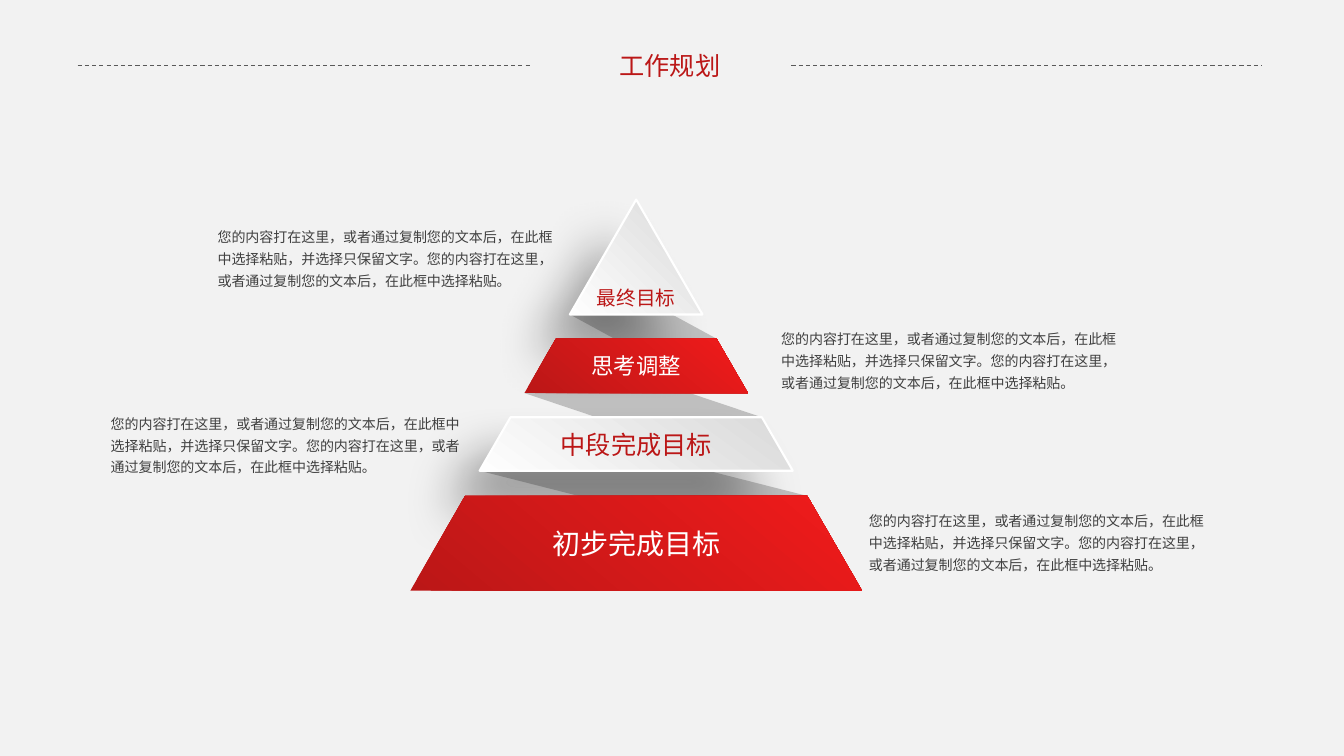
from dataclasses import dataclass

from lxml import etree
from pptx import Presentation
from pptx.dml.color import RGBColor
from pptx.enum.dml import MSO_LINE
from pptx.enum.shapes import MSO_CONNECTOR
from pptx.enum.text import MSO_ANCHOR, MSO_AUTO_SIZE, PP_ALIGN
from pptx.oxml.ns import qn
from pptx.util import Inches, Pt

CENTER, LEFT = PP_ALIGN.CENTER, PP_ALIGN.LEFT
TOP, MIDDLE, BOTTOM = MSO_ANCHOR.TOP, MSO_ANCHOR.MIDDLE, MSO_ANCHOR.BOTTOM
FIT = MSO_AUTO_SIZE.SHAPE_TO_FIT_TEXT
DASH = MSO_LINE.DASH
STRAIGHT = MSO_CONNECTOR.STRAIGHT
WIDE, HIGH = Inches(13.33), Inches(7.5)
COLS, ROWS = 1333, 750


@dataclass(frozen=True)
class Theme:
    back: str = "F2F2F2"
    red: str = "BB1717"
    glow: str = "F11B1B"
    pale: str = "D9D9D9"
    snow: str = "FEFEFE"
    white: str = "FFFFFF"
    fold: str = "BFBFBF"
    rule: str = "595959"
    ink: str = "404040"
    shade: str = "000000"
    head: str = "Lato"
    body: str = "Noto Sans CJK SC"
    title: int = 18
    note: int = 10
    steps: tuple = (14, 16, 18, 20)


THEME = Theme()
NOTE = "您的内容打在这里，或者通过复制您的文本后，在此框中选择粘贴，并选择只保留文字。您的内容打在这里，或者通过复制您的文本后，在此框中选择粘贴。"
NOTES = [(852, 499, 354, 76), (100, 402, 366, 76),
         (765, 318, 361, 76), (206, 217, 362, 76)]
TIERS = [("最终目标", 0, 114, 225), ("思考调整", 138, 192, 50),
         ("中段完成目标", 216, 269, 234), ("初步完成目标", 294, 388, 50)]
FOLDS = (0.77, 0.74, 0.73)


def across(col):
    return round(WIDE * col / COLS)


def down(row):
    return round(HIGH * row / ROWS)


def place(box):
    left, top, wide, high = box
    return across(left), down(top), across(wide), down(high)


def write(frame, text, size, color, face, align, anchor):
    frame.text = text
    frame.vertical_anchor = anchor
    para = frame.paragraphs[0]
    para.alignment = align
    para.font.size = Pt(size)
    para.font.name = face
    para.font.color.rgb = RGBColor.from_string(color)
    props = para._p.pPr.find(qn("a:defRPr"))
    etree.SubElement(props, qn("a:ea"), typeface=face)
    return para


def header(slide, box):
    left, top, wide, high = box
    title = slide.shapes.title
    title.left, title.top, title.width, title.height = place(
        (left + 527, top, 121, high))
    write(title.text_frame, "工作规划", THEME.title, THEME.red,
          THEME.head, CENTER, TOP)
    title.text_frame.word_wrap = False
    title.text_frame.auto_size = FIT
    level = down(top + high / 2)
    for start, end in ((left, left + 449), (left + 708, left + wide)):
        rule = slide.shapes.add_connector(
            STRAIGHT, across(start), level, across(end), level)
        rule.line.color.rgb = RGBColor.from_string(THEME.rule)
        rule.line.width = Pt(0.75)
        rule.line.dash_style = DASH
        etree.SubElement(rule._element.spPr, qn("a:effectLst"))


def outline(slide, points):
    spots = [(across(col), down(row)) for col, row in dict.fromkeys(points)]
    path = slide.shapes.build_freeform(*spots[0], scale=1.0)
    path.add_line_segments(spots[1:], close=True)
    shape = path.convert_to_shape()
    shape.shadow.inherit = False
    shape.line.fill.background()
    return shape


def sides(box, row):
    left, top, wide, high = box
    half = wide / 2 * row / high
    mid = left + wide / 2
    return mid - half, mid + half, top + row


def folds(slide, box):
    for share, upper, lower in zip(FOLDS, TIERS, TIERS[1:]):
        start, end, top = sides(box, upper[2])
        edge, base = sides(box, lower[1])[1:]
        span = (end - start) * share
        shape = outline(slide, [(start, top), (start + span, top),
                                (edge, base), (edge - span, base)])
        shape.fill.solid()
        shape.fill.fore_color.rgb = RGBColor.from_string(THEME.fold)


def shade(shape):
    effects = shape._element.spPr.find(qn("a:effectLst"))
    outer = etree.SubElement(
        effects, qn("a:outerShdw"), blurRad=str(Pt(36)), dist=str(Pt(35)),
        dir=str(130 * 60000), algn="ctr", rotWithShape="0")
    color = etree.SubElement(outer, qn("a:srgbClr"), val=THEME.shade)
    etree.SubElement(color, qn("a:alpha"), val="38000")


def pyramid(slide, box):
    for rank, (text, first, last, angle) in enumerate(TIERS):
        start, end, top = sides(box, first)
        west, east, base = sides(box, last)
        shape = outline(slide, [(west, base), (start, top),
                                (end, top), (east, base)])
        light = rank % 2 == 0
        tones = (THEME.pale, THEME.snow) if light else (THEME.red, THEME.glow)
        shape.fill.gradient()
        shape.fill.gradient_angle = angle
        for stop, tone in zip(shape.fill.gradient_stops, tones):
            stop.color.rgb = RGBColor.from_string(tone)
        if light:
            shape.line.color.rgb = RGBColor.from_string(THEME.white)
            shape.line.width = Pt(1.5)
            shade(shape)
        write(shape.text_frame, text, THEME.steps[rank],
              THEME.red if light else THEME.white, THEME.body, CENTER,
              MIDDLE if rank else BOTTOM)


def remark(slide, box):
    frame = slide.shapes.add_textbox(*place(box)).text_frame
    frame.word_wrap = True
    frame.auto_size = FIT
    para = write(frame, NOTE, THEME.note, THEME.ink, THEME.body, LEFT, TOP)
    para.line_spacing = 1.3


def main():
    deck = Presentation()
    deck.slide_width, deck.slide_height = WIDE, HIGH
    slide = deck.slides.add_slide(deck.slide_layouts[5])
    slide.background.fill.solid()
    slide.background.fill.fore_color.rgb = RGBColor.from_string(THEME.back)
    header(slide, (77, 45, 1175, 40))
    peak = (407, 198, 448, 388)
    folds(slide, peak)
    for box in NOTES:
        remark(slide, box)
    pyramid(slide, peak)
    deck.save("out.pptx")


if __name__ == "__main__":
    main()
